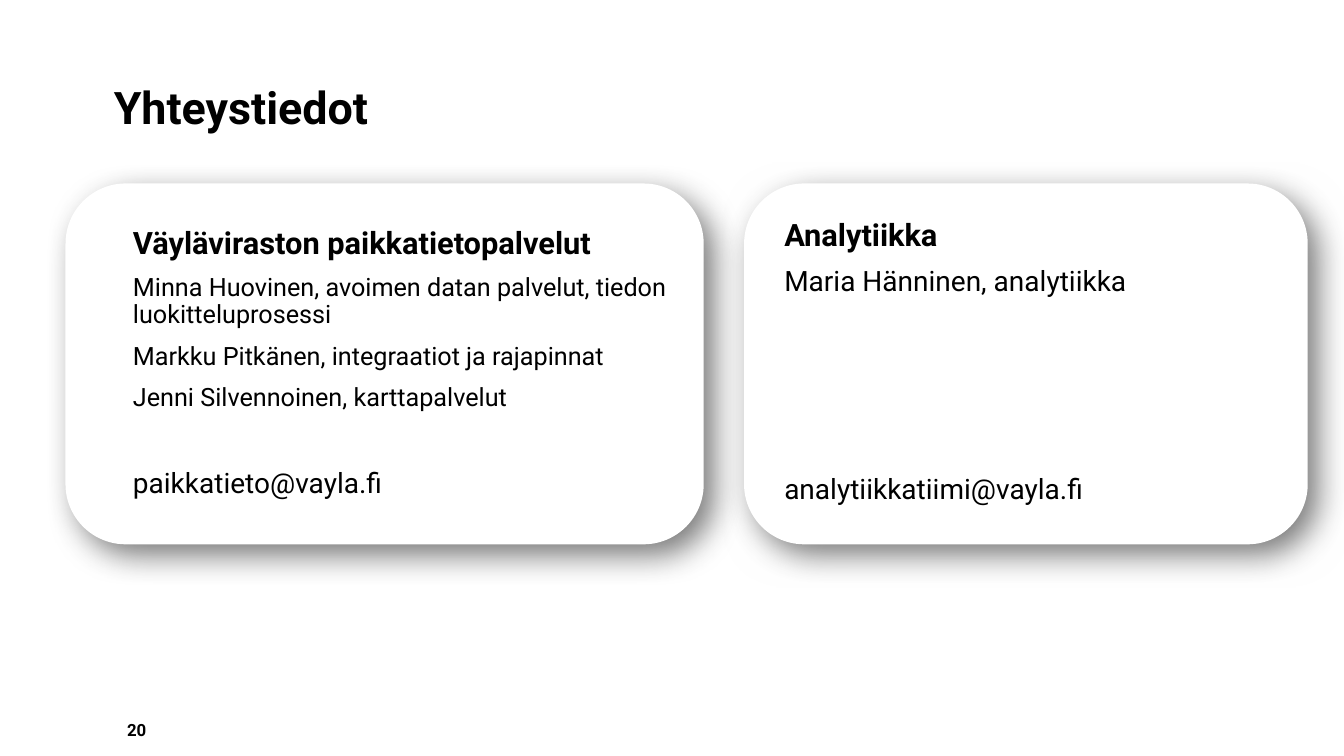
from lxml import etree
from pptx import Presentation
from pptx import util as u
from pptx.dml.color import RGBColor
from pptx.enum import shapes, text
from pptx.oxml import ns

WIDTH, HEIGHT = 13.33, 7.5
FONT = "Roboto"
BLACK, WHITE, SHADOW = "000000", "FFFFFF", "333333"
CARD_TOP, CARD_HEIGHT = 1.82, 3.58


def color(value):
    return RGBColor.from_string(value)


def add_run(paragraph, words, size, bold=False):
    run = paragraph.add_run()
    run.text = words
    run.font.name = FONT
    run.font.size = u.Pt(size)
    run.font.bold = bold
    run.font.color.rgb = color(BLACK)


def add_text(slide, box, lines, anchor=text.MSO_ANCHOR.TOP,
             align=text.PP_ALIGN.LEFT):
    """Place lines of (words, size, bold, space before) in a wrapped box."""
    shape = slide.shapes.add_textbox(*map(u.Inches, box))
    frame = shape.text_frame
    frame.word_wrap = True
    frame.vertical_anchor = anchor
    for index, (words, size, bold, space) in enumerate(lines):
        paragraph = frame.paragraphs[0] if index == 0 else frame.add_paragraph()
        paragraph.alignment = align
        paragraph.line_spacing = 0.9
        paragraph.space_before = u.Pt(space)
        add_run(paragraph, words, size, bold)


def add_shadow(shape):
    """Give the shape a soft shadow towards the lower right."""
    shape.shadow.inherit = False
    effects = shape._element.spPr.find(ns.qn("a:effectLst"))
    shadow = etree.SubElement(
        effects, ns.qn("a:outerShdw"), blurRad=str(u.Pt(23)),
        dist=str(u.Pt(11)), dir=str(45 * 60000), algn="tl", rotWithShape="0")
    tint = etree.SubElement(shadow, ns.qn("a:srgbClr"), val=SHADOW)
    etree.SubElement(tint, ns.qn("a:alpha"), val="65000")


def add_card(slide, box, inset, heading, people, people_size, email, email_gap):
    """Draw a contact card with its text inset from the card's corner."""
    left, top, width, height = box
    card = slide.shapes.add_shape(
        shapes.MSO_SHAPE.ROUNDED_RECTANGLE, *map(u.Inches, box))
    card.fill.solid()
    card.fill.fore_color.rgb = color(WHITE)
    card.line.fill.background()
    add_shadow(card)

    lines = [(heading, 22, True, 0)]
    lines += [(person, people_size, False, 10) for person in people]
    lines.append((email, 20, False, email_gap))
    inset_x, inset_y = inset
    add_text(slide, (left + inset_x, top + inset_y, 5.59, height - inset_y),
             lines)


def add_title(slide, box):
    add_text(slide, box, [("Yhteystiedot", 32, True, 0)],
             text.MSO_ANCHOR.MIDDLE)


def add_page_number(slide, box):
    add_text(slide, box, [("20", 12, True, 0)], text.MSO_ANCHOR.MIDDLE,
             text.PP_ALIGN.RIGHT)


def main():
    presentation = Presentation()
    presentation.slide_width = u.Inches(WIDTH)
    presentation.slide_height = u.Inches(HEIGHT)
    slide = presentation.slides.add_slide(presentation.slide_layouts[6])

    add_title(slide, (1.03, 0.37, 9.45, 1.45))
    add_card(slide, (0.65, CARD_TOP, 6.33, CARD_HEIGHT), (0.57, 0.39),
             "Väyläviraston paikkatietopalvelut",
             ["Minna Huovinen, avoimen datan palvelut, tiedon luokitteluprosessi",
              "Markku Pitkänen, integraatiot ja rajapinnat",
              "Jenni Silvennoinen, karttapalvelut"],
             18, "paikkatieto@vayla.fi", 41)
    add_card(slide, (7.38, CARD_TOP, 5.59, CARD_HEIGHT), (0.3, 0.31),
             "Analytiikka", ["Maria Hänninen, analytiikka"],
             20, "analytiikkatiimi@vayla.fi", 127)
    add_page_number(slide, (0.94, 7.05, 0.61, 0.4))

    presentation.save("out.pptx")


if __name__ == "__main__":
    main()
